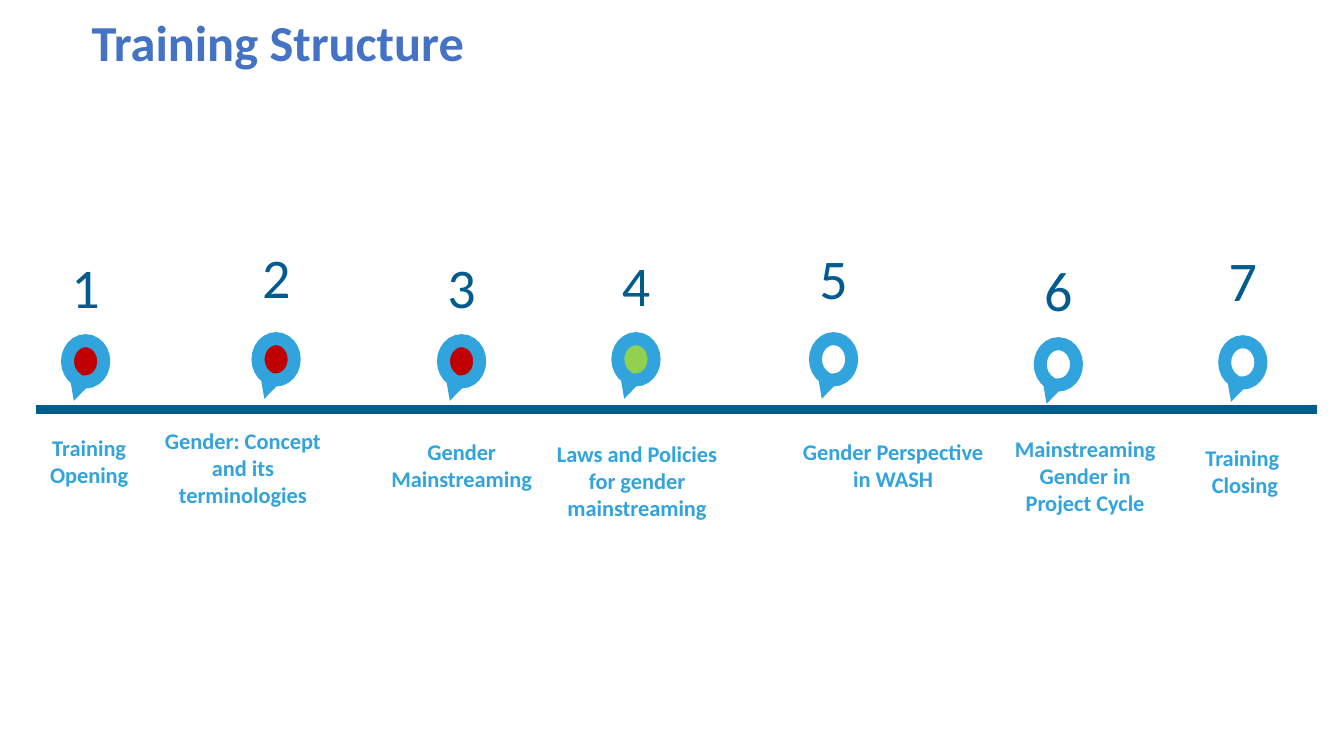
from lxml import etree
from pptx import Presentation
from pptx.dml.color import RGBColor
from pptx.enum.shapes import MSO_CONNECTOR, MSO_SHAPE
from pptx.enum.text import MSO_ANCHOR, PP_ALIGN
from pptx.oxml.ns import qn
from pptx.util import Inches, Pt

LINE = MSO_CONNECTOR.STRAIGHT
CALLOUT = MSO_SHAPE.OVAL_CALLOUT
TOP, MIDDLE = MSO_ANCHOR.TOP, MSO_ANCHOR.MIDDLE
LEFT, CENTER = PP_ALIGN.LEFT, PP_ALIGN.CENTER

FONT = "Calibri"
TITLE_BLUE = RGBColor(0x44, 0x72, 0xC4)
DARK_BLUE = RGBColor(0x00, 0x5B, 0x8E)
SKY_BLUE = RGBColor(0x31, 0xA3, 0xDD)
RED = RGBColor(0xC0, 0x00, 0x00)
GREEN = RGBColor(0x92, 0xD0, 0x50)
WHITE = RGBColor(0xFF, 0xFF, 0xFF)

# Grid of square cells, ten to the inch; boxes are (left, top, width, height)
CELL = Inches(0.1)
SLIDE_COLS, SLIDE_ROWS = 133.33, 75
TITLE_BOX = (8.1, 0.4, 120.7, 8.2)
TIMELINE_BOX = (3.6, 24, 127.1, 28.2)

# Rows and sizes inside the timeline box
RAIL_ROW = 16.6
PIN_W, PIN_H = 3.6, 4.1
NUMBER_W, NUMBER_H = 9, 8.9
LABEL_H = 10.1

# Pin colour, pin centre, pin top, number top,
# label (centre, top, width), label paragraphs
STOPS = [
    (RED, 4.9, 9.8, 1, (5.25, 17.1, 10.5), ["Training Opening"]),
    (RED, 23.8, 9.6, 0, (20.5, 16.4, 19.8),
     ["Gender: Concept and its terminologies"]),
    (RED, 42.2, 9.8, 1, (42.2, 17.5, 19.8), ["Gender Mainstreaming"]),
    (GREEN, 59.5, 9.6, 0.8, (59.6, 17.7, 19.8),
     ["Laws and Policies for gender mainstreaming"]),
    (WHITE, 79.1, 9.6, 0.1, (85, 17.5, 19.8), ["Gender Perspective in WASH"]),
    (WHITE, 101.4, 10.1, 1.3, (104.05, 17.2, 16.5),
     ["Mainstreaming Gender in Project Cycle"]),
    (WHITE, 119.7, 9.9, 0.3, (119.65, 18.1, 16.5), ["Training", " Closing"]),
]


def cells(*lengths):
    return [int(n * CELL) for n in lengths]


def add_text(slide, box, lines, size, color, bold=False, align=CENTER,
             anchor=TOP, insets=(0.4, 2, 0.4, 0), spacing=1.0):
    tf = slide.shapes.add_textbox(*cells(*box)).text_frame
    tf.word_wrap = True
    tf.vertical_anchor = anchor
    (tf.margin_left, tf.margin_top,
     tf.margin_right, tf.margin_bottom) = cells(*insets)
    for i, line in enumerate(lines):
        p = tf.add_paragraph() if i else tf.paragraphs[0]
        p.alignment = align
        p.line_spacing = spacing
        r = p.add_run()
        r.text = line
        r.font.name = FONT
        r.font.size = Pt(size)
        r.font.bold = bold
        r.font.color.rgb = color


def add_title(slide, box):
    add_text(slide, box, ["Training Structure"], 36, TITLE_BLUE, bold=True,
             align=LEFT, anchor=MIDDLE, insets=(1, 0.5, 1, 0.5), spacing=0.9)


def add_rail(slide, left, y, width):
    rail = slide.shapes.add_connector(LINE, *cells(left, y, left + width, y))
    rail.line.color.rgb = DARK_BLUE
    rail.line.width = Pt(6.75)
    etree.SubElement(rail._element.spPr, qn("a:effectLst"))


def add_pin(slide, center, top, color):
    sp = slide.shapes.add_shape(
        CALLOUT, *cells(center - PIN_W / 2, top, PIN_W, PIN_H))
    sp.adjustments[0] = -0.208
    sp.adjustments[1] = 0.625
    sp.shadow.inherit = False
    sp.fill.solid()
    sp.fill.fore_color.rgb = color
    sp.line.color.rgb = SKY_BLUE
    sp.line.width = Pt(9.25)
    # Sharp tip
    ln = sp._element.spPr.find(qn("a:ln"))
    etree.SubElement(ln, qn("a:miter")).set("lim", "800000")


def add_timeline(slide, box):
    left, top, width, _ = box
    add_rail(slide, left, top + RAIL_ROW, width)
    for number, stop in enumerate(STOPS, 1):
        color, center, pin_top, number_top, label, lines = stop
        label_center, label_top, label_w = label
        # Number above the pin
        add_text(slide, (left + center - NUMBER_W / 2, top + number_top,
                         NUMBER_W, NUMBER_H), [str(number)], 40, DARK_BLUE,
                 anchor=MIDDLE, insets=(0, 0, 0, 2.1))
        add_pin(slide, left + center, top + pin_top, color)
        # Label below the rail
        add_text(slide, (left + label_center - label_w / 2, top + label_top,
                         label_w, LABEL_H), lines, 16, SKY_BLUE, bold=True)


def main():
    prs = Presentation()
    prs.slide_width, prs.slide_height = cells(SLIDE_COLS, SLIDE_ROWS)
    s = prs.slides.add_slide(prs.slide_layouts[6])
    s.background.fill.solid()
    s.background.fill.fore_color.rgb = WHITE
    add_title(s, TITLE_BOX)
    add_timeline(s, TIMELINE_BOX)
    prs.save("out.pptx")


if __name__ == "__main__":
    main()
